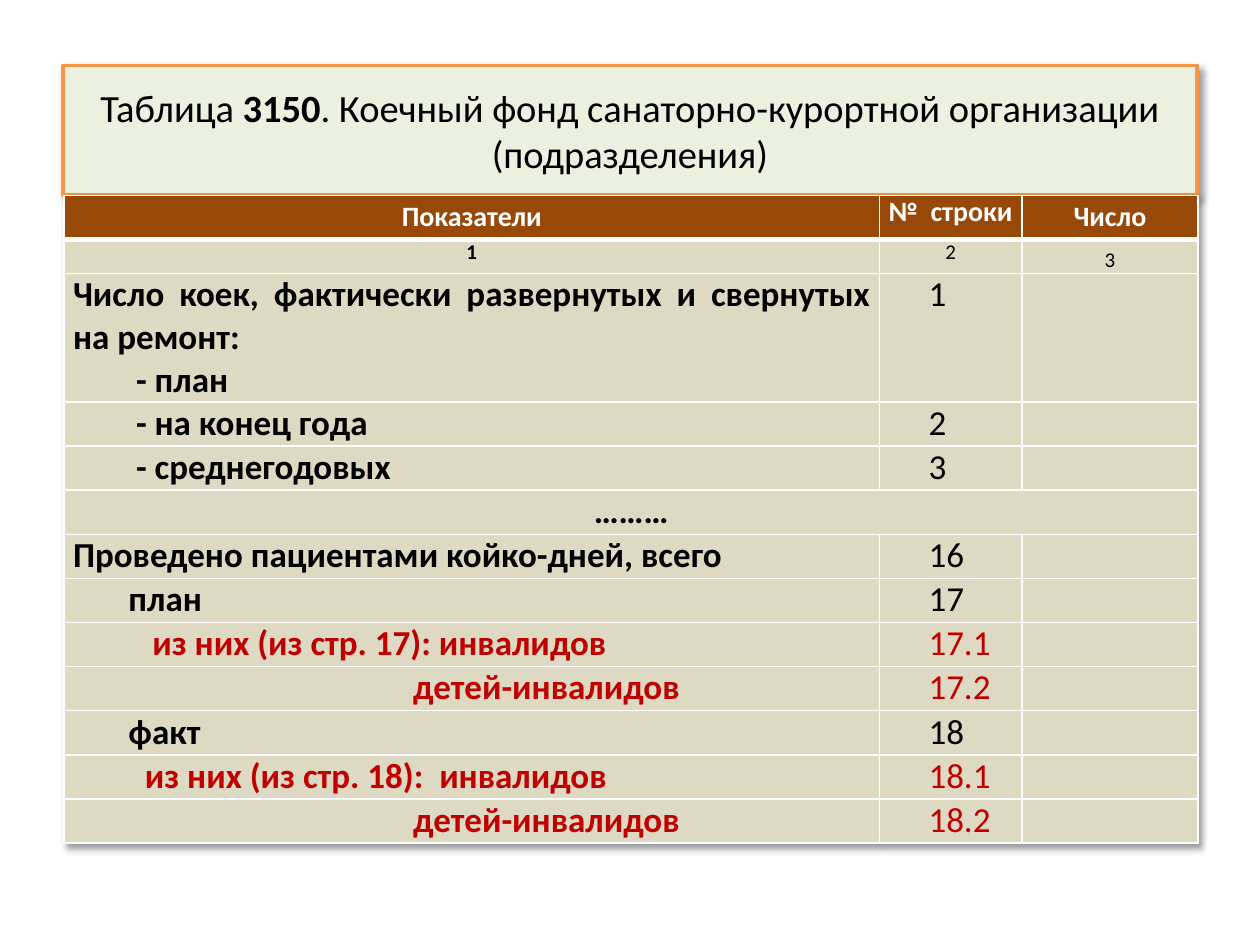
import pptx
import pptx.util
import pptx.dml.color
import pptx.enum.shapes
import pptx.enum.text
import pptx.oxml
import pptx.oxml.ns

Inches = pptx.util.Inches
Pt = pptx.util.Pt
ALIGN = pptx.enum.text.PP_ALIGN
ANCHOR = pptx.enum.text.MSO_ANCHOR

BLACK, WHITE, RED = "000000", "FFFFFF", "C00000"
BROWN, SAND = "984807", "DDD9C3"

COLS = [6.47, 1.13, 1.4]
ROWS = [0.35, 0.27, 1.02] + [0.35] * 10

# Label lines as (text, indent), row number, colour
BODY = [
    ([("Число коек, фактически развернутых и свернутых на ремонт:", 0),
      ("- план", 0.5)], "1", BLACK),
    ([("- на конец года", 0.5)], "2", BLACK),
    ([("- среднегодовых", 0.5)], "3", BLACK),
    ([("………", 0)], None, BLACK),
    ([("Проведено пациентами койко-дней, всего", 0)], "16", BLACK),
    ([("план", 0.44)], "17", BLACK),
    ([("из них (из стр. 17): инвалидов", 0.63)], "17.1", RED),
    ([("детей-инвалидов", 2.7)], "17.2", RED),
    ([("факт", 0.44)], "18", BLACK),
    ([("из них (из стр. 18):  инвалидов", 0.57)], "18.1", RED),
    ([("детей-инвалидов", 2.7)], "18.2", RED),
]


def color(text):
    return pptx.dml.color.RGBColor.from_string(text)


def xml(text):
    head, rest = text.split(">", 1) if "/>" not in text.split(">", 1)[0] + ">" \
        else (text[:-2], None)
    names = pptx.oxml.ns.nsdecls("a")
    return pptx.oxml.parse_xml(
        f"{head} {names}/>" if rest is None else f"{head} {names}>{rest}")


def shadow():
    return xml('<a:effectLst><a:outerShdw blurRad="50800" dist="38100" '
               'dir="2700000" algn="tl" rotWithShape="0"><a:srgbClr val="000000">'
               '<a:alpha val="40000"/></a:srgbClr></a:outerShdw></a:effectLst>')


def add_run(para, text, size, tint=BLACK, bold=False):
    run = para.add_run()
    run.text = text
    font = run.font
    font.name, font.size, font.bold = "Calibri", Pt(size), bold
    font.color.rgb = color(tint)


def add_title(slide):
    box = slide.shapes.add_shape(
        pptx.enum.shapes.MSO_SHAPE.RECTANGLE,
        Inches(0.5), Inches(0.52), Inches(9), Inches(1.03))
    box.fill.solid()
    box.fill.fore_color.rgb = color("EBF1DE")
    box.line.color.rgb = color("F79646")
    box.line.width = Pt(2)
    box.shadow.inherit = False
    props = box.fill._xPr
    props.replace(props.find(pptx.oxml.ns.qn("a:effectLst")), shadow())
    frame = box.text_frame
    frame.word_wrap = True
    frame.vertical_anchor = ANCHOR.MIDDLE
    para = frame.paragraphs[0]
    para.alignment = ALIGN.CENTER
    add_run(para, "Таблица ", 22)
    add_run(para, "3150", 22, bold=True)
    add_run(para, ". Коечный фонд санаторно-курортной организации "
                  "(подразделения)", 22)


def style_cell(cell, fill, base=1):
    """Set insets, fill and white borders; base is the bottom width."""
    cell.margin_left = cell.margin_right = Inches(0.07)
    cell.margin_top = cell.margin_bottom = 0
    cell.fill.solid()
    cell.fill.fore_color.rgb = color(fill)
    props = cell._tc.get_or_add_tcPr()
    for spot, (side, width) in enumerate(zip("LRTB", (1, 1, 1, base))):
        props.insert(spot, xml(
            f'<a:ln{side} w="{Pt(width)}"><a:solidFill><a:srgbClr val="{WHITE}"/>'
            f'</a:solidFill></a:ln{side}>'))


def write(cell, lines, size, tint=BLACK, bold=False, align=ALIGN.CENTER):
    """Fill a cell with (text, first line indent) paragraphs."""
    frame = cell.text_frame
    for num, (text, indent) in enumerate(lines):
        para = frame.add_paragraph() if num else frame.paragraphs[0]
        para.alignment = align
        if indent:
            props = para._p.get_or_add_pPr()
            props.set("marL", "0")
            props.set("indent", str(Inches(indent)))
        add_run(para, text, size, tint, bold)


def add_grid(slide):
    frame = slide.shapes.add_table(
        len(ROWS), len(COLS), Inches(0.51), Inches(1.55),
        Inches(sum(COLS)), Inches(sum(ROWS)))
    table = frame.table
    table._tbl.tblPr.insert(0, shadow())
    for col, width in zip(table.columns, COLS):
        col.width = Inches(width)
    for num, (row, height) in enumerate(zip(table.rows, ROWS)):
        row.height = Inches(height)
        for cell in row.cells:
            style_cell(cell, SAND if num else BROWN, 1 if num else 3)
    return table


def fill_head(table):
    for col, text in enumerate(["Показатели", "№  строки", "Число"]):
        write(table.cell(0, col), [(text, 0)], 16, WHITE, True)
        write(table.cell(1, col), [(str(col + 1), 0)], 12, bold=col == 0)
    for col in (0, 2):
        table.cell(0, col).vertical_anchor = ANCHOR.MIDDLE
    table.cell(1, 2).vertical_anchor = ANCHOR.BOTTOM


def fill_body(table):
    for row, (lines, mark, tint) in enumerate(BODY, 2):
        label = table.cell(row, 0)
        if mark is None:
            label.merge(table.cell(row, 2))
            write(label, lines, 20, tint, True)
            continue
        write(label, lines, 20, tint, True, ALIGN.JUSTIFY)
        write(table.cell(row, 1), [(mark, 0.32)], 20, tint, align=ALIGN.LEFT)


def main():
    deck = pptx.Presentation()
    deck.slide_width, deck.slide_height = Inches(10), Inches(7.5)
    slide = deck.slides.add_slide(deck.slide_layouts[6])
    add_title(slide)
    table = add_grid(slide)
    fill_head(table)
    fill_body(table)
    deck.save("out.pptx")


if __name__ == "__main__":
    main()
